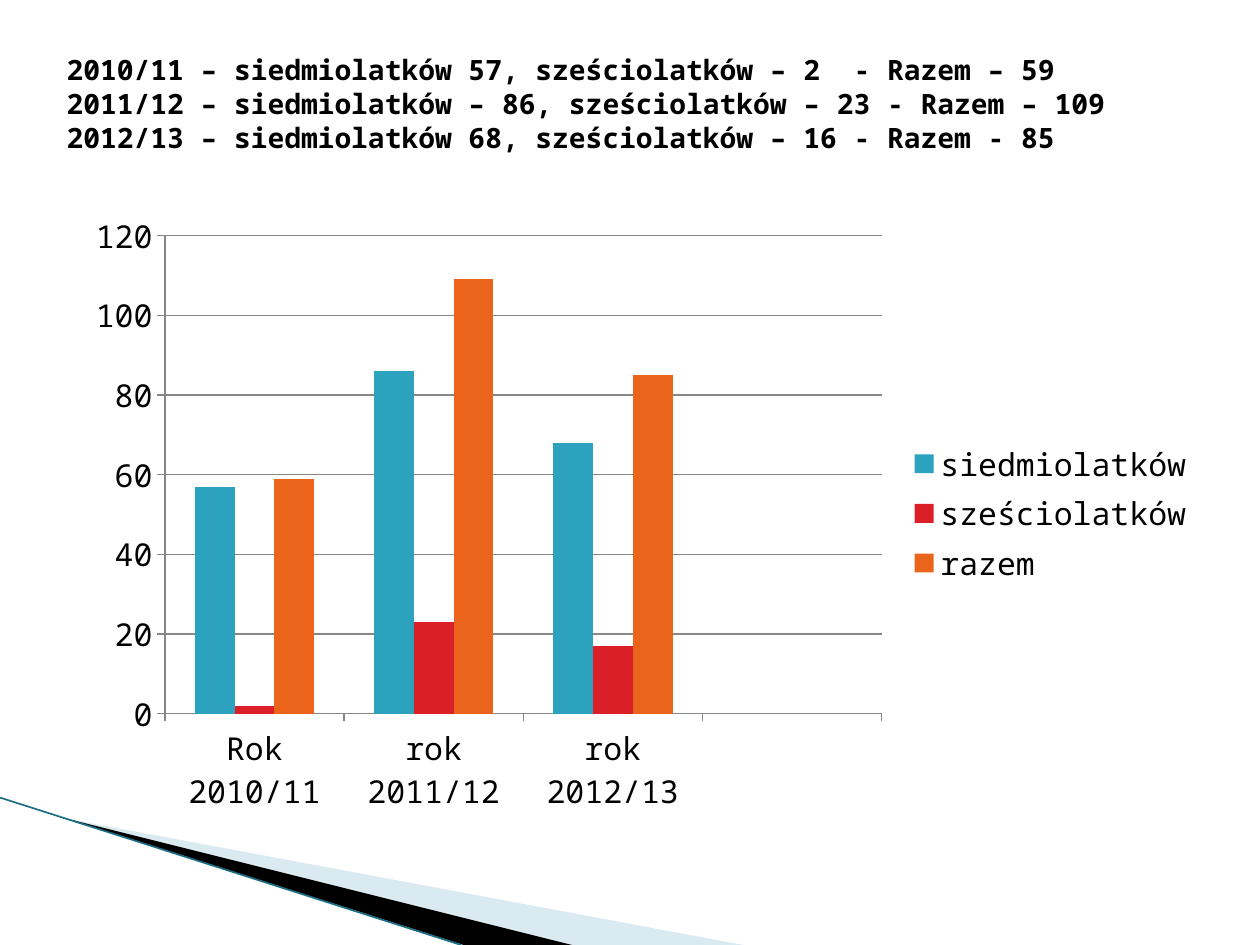
from dataclasses import dataclass

from lxml.etree import SubElement
from pptx import Presentation
from pptx.chart.data import CategoryChartData
from pptx.dml.color import RGBColor
from pptx.enum.chart import XL_CHART_TYPE, XL_LEGEND_POSITION, XL_TICK_MARK
from pptx.enum.shapes import MSO_CONNECTOR
from pptx.enum.text import MSO_ANCHOR
from pptx.oxml.ns import qn
from pptx.util import Inches, Pt

WIDTH, HEIGHT = 10, 7.5


@dataclass(frozen=True)
class Theme:
    """Colours and type sizes of the slide."""
    font: str = "Noto Sans Mono"
    text: str = "000000"
    grid: str = "878787"
    pale_wedge: str = "A0CBDC"
    dark_wedge: str = "000000"
    edge: str = "1A6F85"
    siedmiolatki: str = "2DA2BF"
    szesciolatki: str = "DA1F28"
    razem: str = "EB641B"
    title_size: int = 16
    chart_size: int = 18


THEME = Theme()
SUMMARY = (
    "2010/11 – siedmiolatków 57, sześciolatków – 2  - Razem – 59",
    "2011/12 – siedmiolatków – 86, sześciolatków – 23 - Razem – 109",
    "2012/13 – siedmiolatków 68, sześciolatków – 16 - Razem - 85",
)
YEARS = ("Rok 2010/11", "rok 2011/12", "rok 2012/13", "")
PUPILS = (
    ("siedmiolatków", (57, 86, 68, None), THEME.siedmiolatki),
    ("sześciolatków", (2, 23, 17, None), THEME.szesciolatki),
    ("razem", (59, 109, 85, None), THEME.razem),
)


def color(code):
    """Turn a hex code into a colour."""
    return RGBColor.from_string(code)


def assign(target, values):
    """Set every attribute in a dict of format values."""
    for name, value in values.items():
        setattr(target, name, value)


def style_font(font, size, bold=False):
    """Apply the theme's typeface and text colour."""
    assign(font, {"name": THEME.font, "size": Pt(size), "bold": bold})
    font.color.rgb = color(THEME.text)


def add_wedge(slide, corners, fill, opacity=100):
    """Draw a filled, unlined polygon with corners in inches."""
    start, *others = [(Inches(x), Inches(y)) for x, y in corners]
    builder = slide.shapes.build_freeform(*start)
    builder.add_line_segments(others, close=True)
    wedge = builder.convert_to_shape()
    wedge.shadow.inherit = False
    wedge.line.fill.background()
    wedge.fill.solid()
    wedge.fill.fore_color.rgb = color(fill)
    if opacity < 100:
        tint = wedge.fill._xPr.find(f".//{qn('a:srgbClr')}")
        SubElement(tint, qn("a:alpha"), val=str(opacity * 1000))


def add_edge(slide, start, end):
    """Draw the thin line along the corner decoration."""
    points = [Inches(value) for value in (*start, *end)]
    edge = slide.shapes.add_connector(MSO_CONNECTOR.STRAIGHT, *points)
    edge.line.width = Pt(0.95)
    edge.line.color.rgb = color(THEME.edge)
    SubElement(edge._element.spPr, qn("a:effectLst"))


def add_summary(slide, box, lines):
    """Write the yearly totals above the chart."""
    frame = slide.shapes.add_textbox(*map(Inches, box)).text_frame
    assign(frame, {"word_wrap": True, "vertical_anchor": MSO_ANCHOR.TOP,
                   "margin_top": Inches(0.13)})
    frame.text = "\n".join(lines)
    for paragraph in frame.paragraphs:
        style_font(paragraph.font, THEME.title_size, bold=True)


def style_axis(axis, gridlines):
    """Format one axis of the chart."""
    assign(axis, {"has_major_gridlines": gridlines,
                  "major_tick_mark": XL_TICK_MARK.OUTSIDE,
                  "minor_tick_mark": XL_TICK_MARK.NONE})
    lines = [axis.format.line]
    if gridlines:
        lines.append(axis.major_gridlines.format.line)
    for line in lines:
        line.width = Pt(0.75)
        line.color.rgb = color(THEME.grid)


def add_pupil_chart(slide, box):
    """Chart the number of pupils by age and school year."""
    data = CategoryChartData()
    data.categories = YEARS
    for name, counts, _ in PUPILS:
        data.add_series(name, counts)
    chart = slide.shapes.add_chart(
        XL_CHART_TYPE.COLUMN_CLUSTERED, *map(Inches, box), data).chart
    assign(chart, {"has_title": False, "has_legend": True})
    style_font(chart.font, THEME.chart_size)
    assign(chart.legend, {"position": XL_LEGEND_POSITION.RIGHT,
                          "include_in_layout": False})
    plot = chart.plots[0]
    assign(plot, {"gap_width": 150, "overlap": 0, "vary_by_categories": False})
    for series, (_, _, fill) in zip(plot.series, PUPILS):
        series.format.fill.solid()
        series.format.fill.fore_color.rgb = color(fill)
    style_axis(chart.category_axis, gridlines=False)
    style_axis(chart.value_axis, gridlines=True)
    assign(chart.value_axis, {"minimum_scale": 0, "maximum_scale": 120,
                              "major_unit": 20})


def main():
    """Build and save the slide."""
    deck = Presentation()
    assign(deck, {"slide_width": Inches(WIDTH), "slide_height": Inches(HEIGHT)})
    slide = deck.slides.add_slide(deck.slide_layouts[6])
    tip = (0.54, 6.5)
    add_wedge(slide, (tip, (5.9, HEIGHT), (4.54, HEIGHT)),
              THEME.pale_wedge, opacity=40)
    add_wedge(slide, (tip, (4.54, HEIGHT), (3.68, HEIGHT)), THEME.dark_wedge)
    add_edge(slide, (0, 6.33), (3.66, HEIGHT))
    add_pupil_chart(slide, (0.58, 1.6, 0.9 * WIDTH, 0.66 * HEIGHT))
    add_summary(slide, (0.43, 0.29, 9.15, 1.32), SUMMARY)
    deck.save("out.pptx")


if __name__ == "__main__":
    main()
